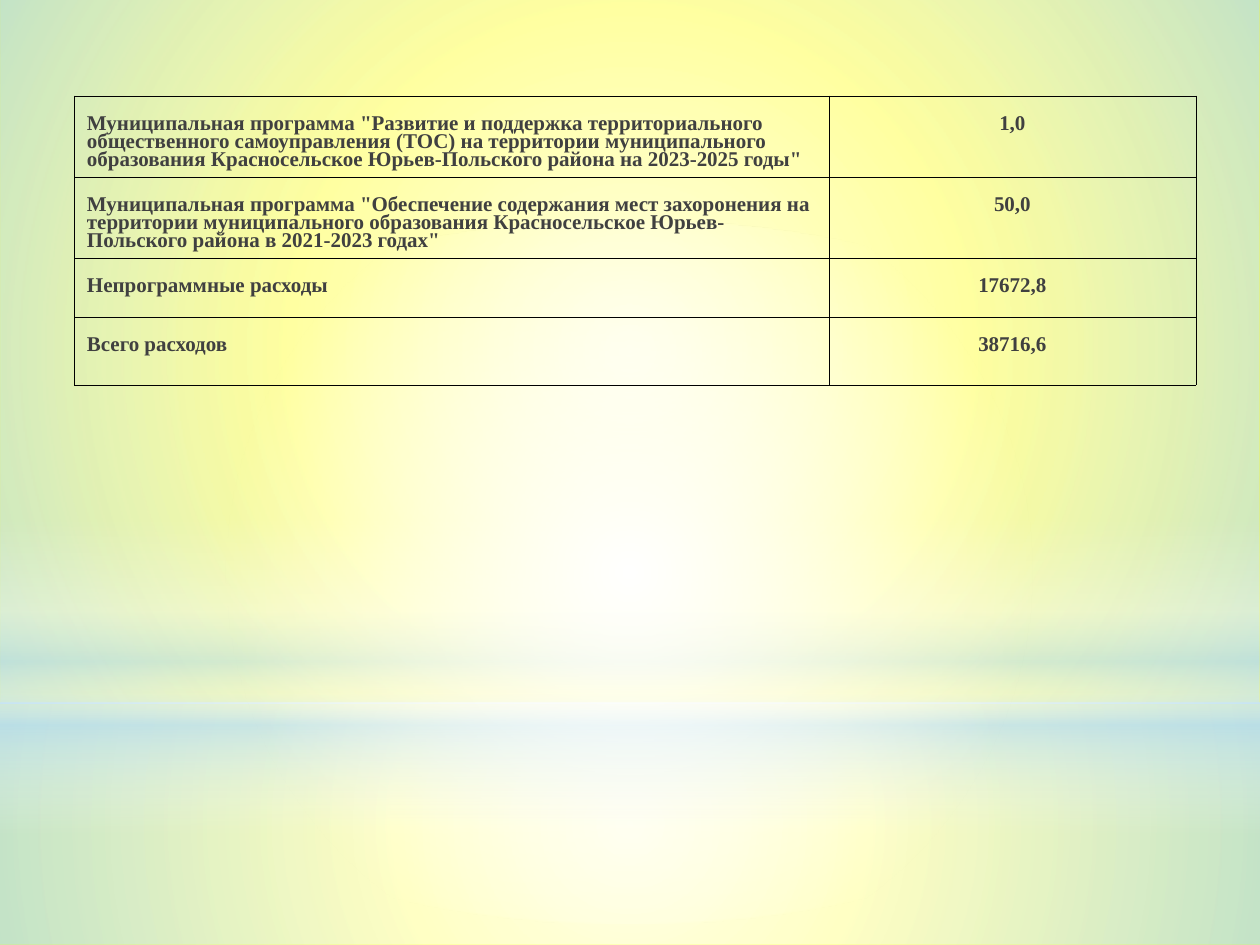
from lxml.etree import SubElement
from pptx import Presentation
from pptx.dml.color import RGBColor
from pptx.enum.shapes import MSO_SHAPE as Shape
from pptx.enum.text import PP_ALIGN as Align
from pptx.oxml.ns import qn
from pptx.util import Inches, Pt

YELLOW = RGBColor(0xFF, 0xFF, 0x00)
WHITE = RGBColor(0xFF, 0xFF, 0xFF)
SKY = RGBColor(0xB4, 0xDC, 0xFA)
BLACK = RGBColor(0x00, 0x00, 0x00)
GREY = RGBColor(0x40, 0x40, 0x40)

HORIZON = 5.58 / 7.5

EXPENSES = [
    ('Муниципальная программа "Развитие и поддержка территориального '
     'общественного самоуправления (ТОС) на территории муниципального '
     'образования Красносельское Юрьев-Польского района на 2023-2025 годы"', "1,0"),
    ('Муниципальная программа "Обеспечение содержания мест захоронения на '
     'территории муниципального образования Красносельское '
     'Юрьев-Польского района в 2021-2023 годах"', "50,0"),
    ("Непрограммные расходы", "17672,8"),
    ("Всего расходов", "38716,6"),
]


def add_color(parent, color, opacity=100):
    node = SubElement(parent, qn("a:srgbClr"), val=str(color))
    if opacity < 100:
        SubElement(node, qn("a:alpha"), val=str(opacity * 1000))


class SlideBuilder:
    """Holds the style and the current slide; places are shares of the slide."""

    font = "Times New Roman"
    size = Pt(12)
    spacing = 0.78
    border = Pt(0.06)

    def __init__(self, deck):
        self.width, self.height = deck.slide_width, deck.slide_height
        self.slide = deck.slides.add_slide(deck.slide_layouts[6])

    def background(self, color):
        fill = self.slide.background.fill
        fill.solid()
        fill.fore_color.rgb = color

    def place(self, left, top, width, height):
        return (round(left * self.width), round(top * self.height),
                round(width * self.width), round(height * self.height))

    def glow(self, kind, top, height, stops, angle=None):
        """Full-width gradient shape, radial unless an angle is given.

        Stops are (position, colour, opacity), all numbers in percent.
        """
        shape = self.slide.shapes.add_shape(kind, *self.place(0, top, 1, height))
        shape.shadow.inherit = False
        shape.line.fill.background()
        shape.fill.background()
        properties = shape.fill._xPr
        old_fill = properties.find(qn("a:noFill"))
        gradient = SubElement(properties, qn("a:gradFill"), rotWithShape="1")
        properties.replace(old_fill, gradient)
        stop_list = SubElement(gradient, qn("a:gsLst"))
        for position, color, opacity in stops:
            stop = SubElement(stop_list, qn("a:gs"), pos=str(position * 1000))
            add_color(stop, color, opacity)
        if angle is None:
            path = SubElement(gradient, qn("a:path"), path="circle")
            SubElement(path, qn("a:fillToRect"), l="50000", t="50000", r="50000", b="50000")
        else:
            SubElement(gradient, qn("a:lin"), ang=str(angle * 60000), scaled="0")

    def table(self, left, top, widths, heights, rows):
        frame = self.slide.shapes.add_table(
            len(heights), len(widths),
            *self.place(left, top, sum(widths), sum(heights)))
        table = frame.table
        table.first_row = table.horz_banding = False
        for column, width in zip(table.columns, widths):
            column.width = round(width * self.width)
        for row, height, texts in zip(table.rows, heights, rows):
            row.height = round(height * self.height)
            for cell, text, align in zip(row.cells, texts, (Align.LEFT, Align.CENTER)):
                self.cell(cell, text, align)

    def cell(self, cell, text, align):
        cell.margin_left = cell.margin_right = Inches(0.1)
        cell.margin_top, cell.margin_bottom = Inches(0.16), Inches(0.05)
        properties = cell._tc.get_or_add_tcPr()
        for side in ("lnL", "lnR", "lnT", "lnB"):
            line = SubElement(properties, qn(f"a:{side}"), w=str(int(self.border)))
            add_color(SubElement(line, qn("a:solidFill")), BLACK)
        cell.fill.background()
        para = cell.text_frame.paragraphs[0]
        para.alignment = align
        para.line_spacing = self.spacing
        span = para.add_run()
        span.text = text
        span.font.name, span.font.size = self.font, self.size
        span.font.bold = True
        span.font.color.rgb = GREY


def main():
    deck = Presentation()
    deck.slide_width, deck.slide_height = Inches(10), Inches(7.5)
    page = SlideBuilder(deck)
    page.background(YELLOW)
    page.glow(Shape.RECTANGLE, HORIZON, 1 - HORIZON,
              [(0, WHITE, 91), (37, WHITE, 76), (100, SKY, 79)])
    page.glow(Shape.RECTANGLE, 0, HORIZON,
              [(0, WHITE, 89), (48, WHITE, 62), (100, SKY, 79)])
    page.glow(Shape.RECTANGLE, 0.55, 1 / 3,
              [(0, WHITE, 0), (29, WHITE, 30), (45, SKY, 40),
               (55, WHITE, 26), (65, SKY, 60), (100, WHITE, 0)], angle=90)
    page.glow(Shape.OVAL, 1.75 / 7.5, HORIZON, [(0, WHITE, 100), (56, WHITE, 0)])
    page.table(0.059, 0.76 / 7.5, (0.599, 0.291),
               [inches / 7.5 for inches in (0.54, 0.56, 0.47, 0.54)], EXPENSES)
    deck.save("out.pptx")


if __name__ == "__main__":
    main()
